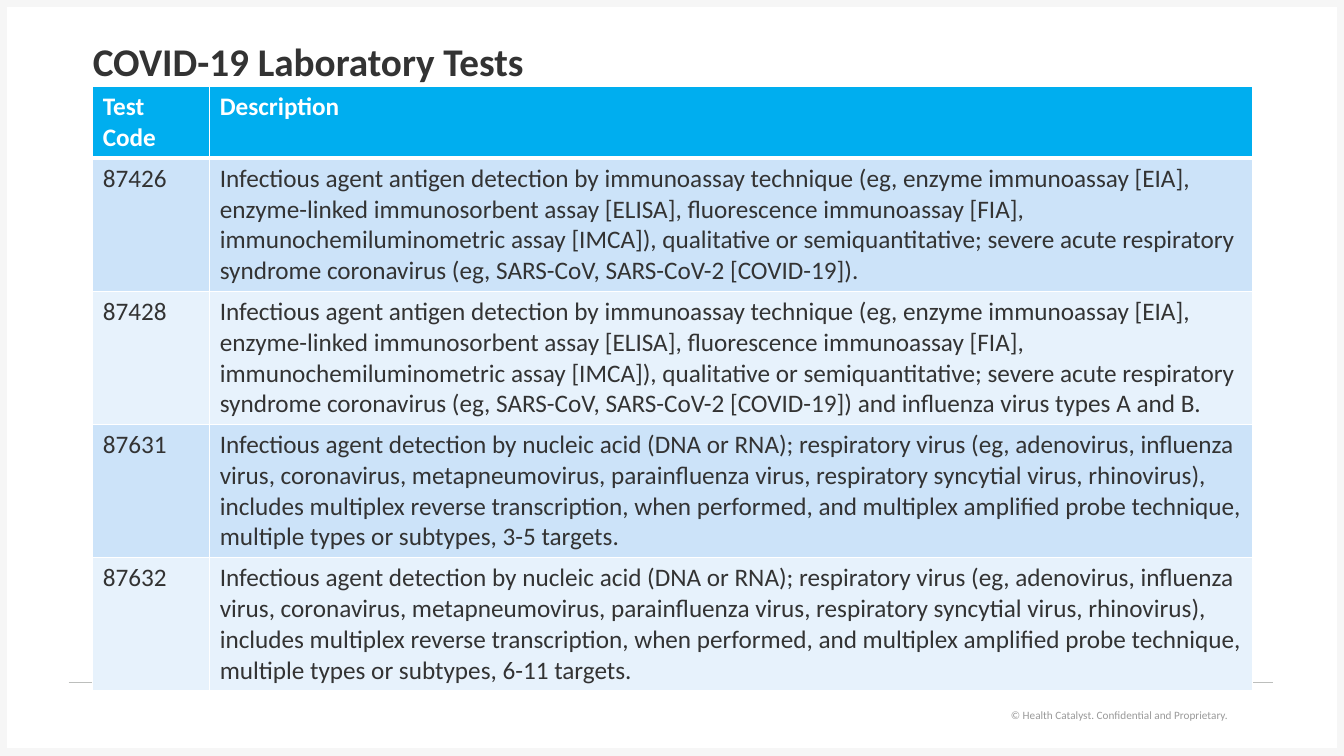
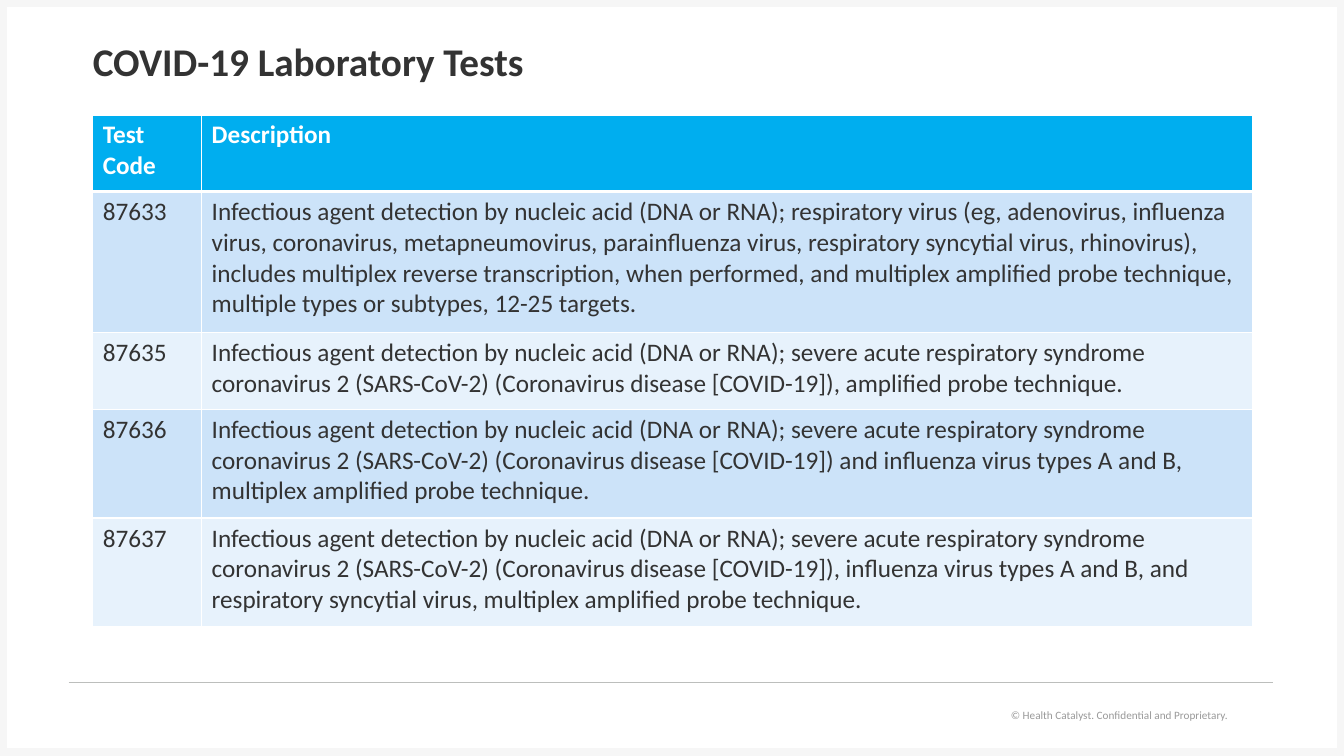
from lxml import etree
from pptx import Presentation
from pptx.dml.color import RGBColor
from pptx.enum.shapes import MSO_CONNECTOR, MSO_SHAPE
from pptx.enum.text import MSO_ANCHOR, MSO_AUTO_SIZE, PP_ALIGN
from pptx.oxml.ns import qn
from pptx.util import Inches, Pt

# Content
TITLE = "COVID-19 Laboratory Tests"
COPYRIGHT = "© Health Catalyst. Confidential and Proprietary."
HEADER = ("Test Code", "Description")

ANTIGEN = (
    "Infectious agent antigen detection by immunoassay technique (eg, enzyme immunoassay [EIA], "
    "enzyme-linked immunosorbent assay [ELISA], fluorescence immunoassay [FIA], "
    "immunochemiluminometric assay [IMCA]), qualitative or semiquantitative; severe acute "
    "respiratory syndrome coronavirus (eg, SARS-CoV, SARS-CoV-2 [COVID-19])"
)
NUCLEIC_ACID = "Infectious agent detection by nucleic acid (DNA or RNA); "
RESPIRATORY = NUCLEIC_ACID + (
    "respiratory virus (eg, adenovirus, influenza virus, coronavirus, metapneumovirus, "
    "parainfluenza virus, respiratory syncytial virus, rhinovirus), includes multiplex reverse "
    "transcription, when performed, and multiplex amplified probe technique, "
    "multiple types or subtypes, "
)
SARS = NUCLEIC_ACID + (
    "severe acute respiratory syndrome coronavirus 2 (SARS-CoV-2) "
    "(Coronavirus disease [COVID-19])"
)

SLIDES = [
    {
        "top": 0.86,
        "code_width": 1.16,
        "heights": [0.7, 1.3, 1.3, 1.3, 1.3],
        "tests": [
            ("87426", ANTIGEN + "."),
            ("87428", ANTIGEN + " and influenza virus types A and B."),
            ("87631", RESPIRATORY + "3-5 targets."),
            ("87632", RESPIRATORY + "6-11 targets."),
        ],
    },
    {
        "top": 1.14,
        "code_width": 1.08,
        "heights": [0.76, 1.4, 0.76, 1.08, 1.08],
        "tests": [
            ("87633", RESPIRATORY + "12-25 targets."),
            ("87635", SARS + ", amplified probe technique."),
            ("87636", SARS + " and influenza virus types A and B, "
                             "multiplex amplified probe technique."),
            ("87637", SARS + ", influenza virus types A and B, and respiratory syncytial virus, "
                             "multiplex amplified probe technique."),
        ],
    },
]

# Shared style
FONT = "Calibri"
WHITE = RGBColor(0xFF, 0xFF, 0xFF)
INK = RGBColor(0x33, 0x33, 0x33)
GREY = RGBColor(0x99, 0x99, 0x99)
RULE = RGBColor(0xBC, 0xBE, 0xBC)
FRAME = RGBColor(0xF6, 0xF6, 0xF6)
HEADER_BLUE = RGBColor(0x00, 0xAE, 0xEF)
BANDS = (RGBColor(0xCC, 0xE3, 0xF9), RGBColor(0xE7, 0xF2, 0xFC))

LEFT, WIDTH = 0.92, 11.5
RULE_Y, RULE_STOPS = 6.77, (0.68, 5.58, 12.63)
TITLE_ONLY = 5
RECTANGLE = MSO_SHAPE.RECTANGLE
STRAIGHT = MSO_CONNECTOR.STRAIGHT
MIDDLE = MSO_ANCHOR.MIDDLE
NO_AUTOFIT = MSO_AUTO_SIZE.NONE
ALIGN_LEFT, ALIGN_RIGHT = PP_ALIGN.LEFT, PP_ALIGN.RIGHT


def write(frame, text, size=18, color=INK, bold=False, align=ALIGN_LEFT, spacing=None):
    para = frame.paragraphs[0]
    para.alignment = align
    if spacing:
        para.line_spacing = spacing
    span = para.add_run()
    span.text = text
    span.font.name = FONT
    span.font.size = Pt(size)
    span.font.bold = bold
    span.font.color.rgb = color


def add_box(page, left, top, width, height):
    box = page.shapes.add_shape(RECTANGLE, Inches(left), Inches(top),
                                Inches(width), Inches(height))
    box.shadow.inherit = False
    return box


def add_rule(page, start, end):
    rule = page.shapes.add_connector(STRAIGHT, Inches(start), Inches(RULE_Y),
                                     Inches(end), Inches(RULE_Y))
    rule.line.color.rgb = RULE
    rule.line.width = Pt(0.75)
    etree.SubElement(rule.element.spPr, qn("a:effectLst"))
    return rule


def style_layout(layout, page):
    """Set the title place, and move the frame, footer and rules to the layout."""
    title = layout.placeholders[0]
    title.left, title.top = Inches(LEFT), Inches(0.4)
    title.width, title.height = Inches(WIDTH), Inches(0.46)
    body = title.text_frame
    body.margin_left = 0
    body.margin_right = Inches(0.1)
    body.margin_top = body.margin_bottom = Inches(0.05)
    body.vertical_anchor = MIDDLE
    body.auto_size = NO_AUTOFIT

    border = add_box(page, 0.02, 0.02, 13.29, 7.46)
    border.fill.background()
    border.line.color.rgb = FRAME
    border.line.width = Pt(7.75)

    footer = add_box(page, 9.83, 6.97, 2.45, 0.24)
    footer.fill.solid()
    footer.fill.fore_color.rgb = WHITE
    footer.line.fill.background()
    footer.text_frame.word_wrap = True
    write(footer.text_frame, COPYRIGHT, size=8, color=GREY, align=ALIGN_RIGHT)

    rules = [add_rule(page, start, end) for start, end in zip(RULE_STOPS, RULE_STOPS[1:])]
    for shape in (border, footer, *rules):
        layout.shapes.element.append(shape.element)


def set_borders(cell, top=1, bottom=1):
    properties = cell._tc.get_or_add_tcPr()
    sides = (("a:lnL", 1), ("a:lnR", 1), ("a:lnT", top), ("a:lnB", bottom))
    for place, (tag, points) in enumerate(sides):
        line = etree.Element(qn(tag), w=str(Pt(points)))
        fill = etree.SubElement(line, qn("a:solidFill"))
        etree.SubElement(fill, qn("a:srgbClr"), val=str(WHITE))
        properties.insert(place, line)


def add_tests(page, top, code_width, heights, tests):
    rows = [HEADER, *tests]
    table = page.shapes.add_table(len(rows), len(HEADER), Inches(LEFT), Inches(top),
                                  Inches(WIDTH), Inches(sum(heights))).table
    for column, width in zip(table.columns, (code_width, WIDTH - code_width)):
        column.width = Inches(width)
    for index, (texts, height) in enumerate(zip(rows, heights)):
        table.rows[index].height = Inches(height)
        is_header = index == 0
        for column, text in enumerate(texts):
            cell = table.cell(index, column)
            cell.fill.solid()
            cell.fill.fore_color.rgb = HEADER_BLUE if is_header else BANDS[(index - 1) % 2]
            write(cell.text_frame, text, color=WHITE if is_header else INK, bold=is_header)
            # A thick line parts the header from the first test
            set_borders(cell, top=3 if index == 1 else 1, bottom=3 if is_header else 1)


def main():
    deck = Presentation()
    deck.slide_width, deck.slide_height = Inches(13.33), Inches(7.5)
    layout = deck.slide_layouts[TITLE_ONLY]
    pages = [deck.slides.add_slide(layout) for _ in SLIDES]
    style_layout(layout, pages[0])
    for page, content in zip(pages, SLIDES):
        write(page.shapes.title.text_frame, TITLE, size=28, bold=True, spacing=0.9)
        add_tests(page, **content)
    deck.save("out.pptx")


if __name__ == "__main__":
    main()
